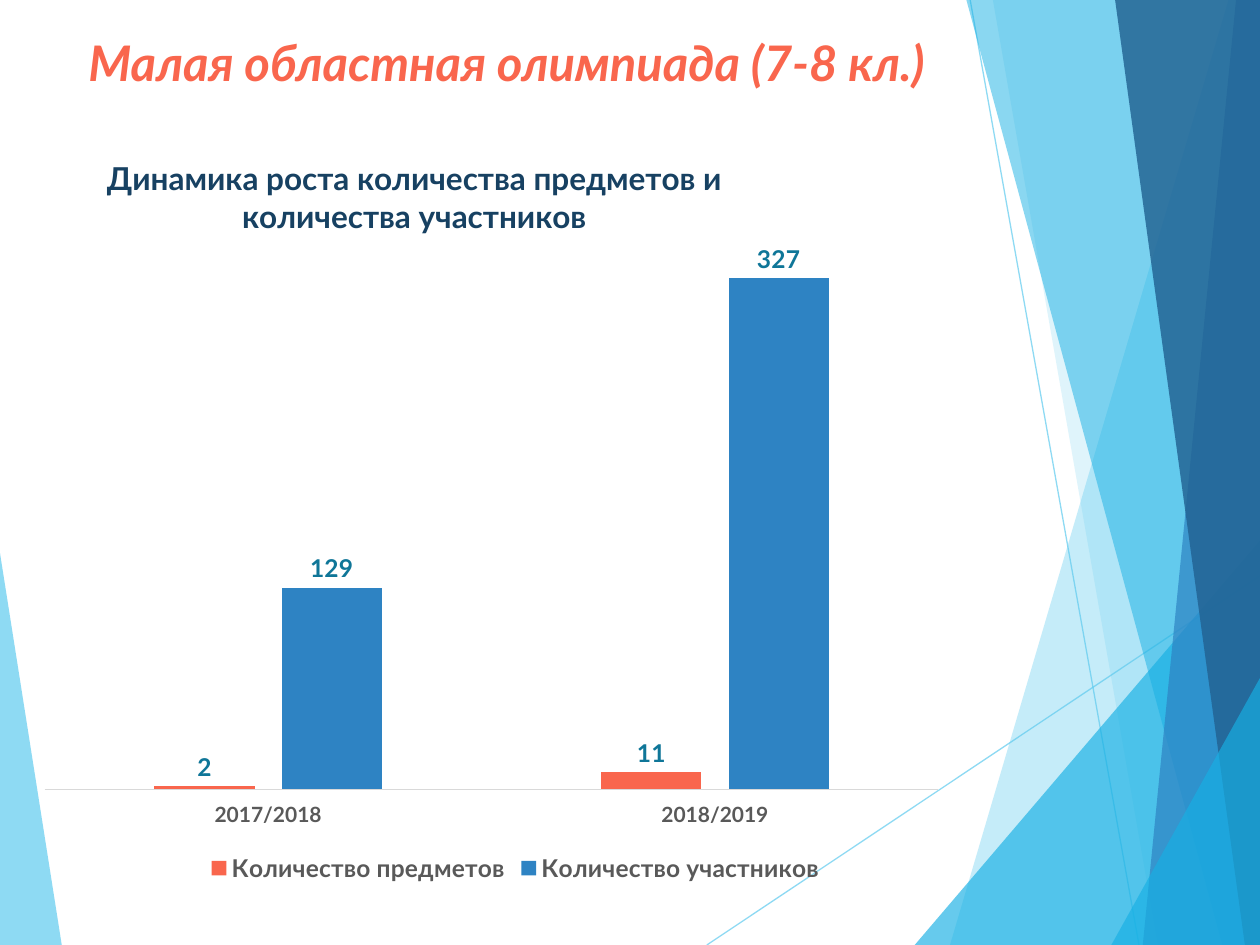
"""Build the slide on the growth of the small regional olympiad."""
from lxml.etree import SubElement
from pptx import Presentation
from pptx.chart.data import CategoryChartData
from pptx.dml.color import RGBColor
from pptx.enum.chart import XL_CHART_TYPE, XL_LABEL_POSITION, XL_LEGEND_POSITION, XL_TICK_LABEL_POSITION, XL_TICK_MARK
from pptx.enum.shapes import MSO_CONNECTOR
from pptx.enum.text import MSO_ANCHOR, MSO_AUTO_SIZE, PP_ALIGN
from pptx.oxml import parse_xml
from pptx.oxml.ns import nsdecls, qn
from pptx.util import Inches, Pt

COLORS = {
    "sky": "5FCBEF", "cyan": "17B0E4", "blue": "2E83C3", "navy": "226292",
    "coral": "F9664D", "ink": "174162", "teal": "0F7698", "gray": "595959", "rule": "D9D9D9",
}


def style(font, size, color, bold=True, italic=False):
    font.name = "Lato"
    font.size = Pt(size)
    font.bold = bold
    font.italic = italic
    font.color.rgb = RGBColor.from_string(COLORS[color])


def write(frame, text, **fmt):
    para = frame.paragraphs[0]
    para.alignment = PP_ALIGN.CENTER
    run = para.add_run()
    run.text = text
    style(run.font, **fmt)
    return run


deck = Presentation()
deck.slide_width, deck.slide_height = Inches(10), Inches(7.5)
slide = deck.slides.add_slide(deck.slide_layouts[6])
shapes = slide.shapes

rays = [((5.61, 7.5), (10, 4.57)), ((7.7, 0), (9.04, 7.5))]
shards = [
    ("sky", 70, [(0, 4.39), (0.49, 7.5), (0, 7.5)]),
    ("sky", 36, [(9.75, 0), (7.54, 7.5), (10, 7.5), (10, 0)]),
    ("sky", 20, [(7.88, 0), (9.19, 7.5), (10, 7.5), (10, 0)]),
    ("cyan", 66, [(7.26, 7.5), (10, 4.29), (10, 7.5)]),
    ("cyan", 50, [(7.67, 0), (9.7, 7.5), (10, 7.5), (10, 0)]),
    ("blue", 70, [(9.81, 0), (9.07, 7.5), (10, 7.5), (10, 0)]),
    ("navy", 82, [(8.85, 0), (9.88, 7.5), (10, 7.5), (10, 0)]),
    ("cyan", 66, [(8.82, 7.5), (10, 5.38), (10, 7.5)]),
]
for start, end in rays:
    ray = shapes.add_connector(MSO_CONNECTOR.STRAIGHT, *map(Inches, start + end))
    ray.line.width = Pt(0.75)
    ray.line.color.rgb = RGBColor.from_string(COLORS["sky"])
    tint = next(ray.line._ln.iter(qn("a:srgbClr")))
    SubElement(tint, qn("a:alpha"), val="70000")
    SubElement(ray._element.spPr, qn("a:effectLst"))

for color, alpha, points in shards:
    spots = [(Inches(x), Inches(y)) for x, y in points]
    pen = shapes.build_freeform(*spots[0])
    pen.add_line_segments(spots[1:], close=True)
    shard = pen.convert_to_shape()
    shard.shadow.inherit = False
    shard.line.fill.background()
    shard.fill.solid()
    shard.fill.fore_color.rgb = RGBColor.from_string(COLORS[color])
    tint = next(shard._element.spPr.iter(qn("a:srgbClr")))
    SubElement(tint, qn("a:alpha"), val=str(alpha * 1000))

data = CategoryChartData()
data.categories = ["2017/2018", "2018/2019"]
data.add_series("Количество предметов", [2, 11])
data.add_series("Количество участников", [129, 327])
chart = shapes.add_chart(
    XL_CHART_TYPE.COLUMN_CLUSTERED, Inches(0.35), Inches(1.07), Inches(7.48), Inches(5.98), data
).chart
style(chart.font, 10, "gray", bold=False)
write(chart.chart_title.text_frame, "Динамика роста количества предметов и количества участников",
      size=18, color="ink")
chart.chart_title.include_in_layout = False

axis = chart.category_axis
axis.major_tick_mark = XL_TICK_MARK.NONE
axis.tick_label_position = XL_TICK_LABEL_POSITION.LOW
axis.format.line.width = Pt(0.75)
axis.format.line.color.rgb = RGBColor.from_string(COLORS["rule"])
style(axis.tick_labels.font, 12, "gray")
scale = chart.value_axis
scale.visible = False
scale.has_major_gridlines = False
scale.minimum_scale, scale.maximum_scale = 0, 350

chart.has_legend = True
chart.legend.position = XL_LEGEND_POSITION.BOTTOM
chart.legend.include_in_layout = False
style(chart.legend.font, 14, "gray")

plot = chart.plots[0]
plot.gap_width, plot.overlap = 219, -27
plot.vary_by_categories = False
for bars, color in zip(plot.series, ["coral", "blue"]):
    bars.format.fill.solid()
    bars.format.fill.fore_color.rgb = RGBColor.from_string(COLORS[color])
    labels = bars.data_labels
    labels.show_value = True
    labels.position = XL_LABEL_POSITION.OUTSIDE_END
    style(labels.font, 14, "teal")

places = [
    (chart._chartSpace.chart.plotArea, 0, {"x": 0, "y": 0.143, "w": 0.949, "h": 0.726}),
    (chart.chart_title._element, 1, {"x": 0.06, "y": 0.02}),
]
for part, spot, box in places:
    for old in part.findall(qn("c:layout")):
        part.remove(old)
    target = '<c:layoutTarget val="inner"/>' if "w" in box else ""
    modes = "".join(f'<c:{key}Mode val="edge"/>' for key in "xy")
    sizes = "".join(f'<c:{key} val="{val}"/>' for key, val in box.items())
    part.insert(spot, parse_xml(
        f'<c:layout {nsdecls("c")}><c:manualLayout>{target}{modes}{sizes}</c:manualLayout></c:layout>'))

title = shapes.add_textbox(Inches(0.2), Inches(0.21), Inches(7.64), Inches(0.57))
frame = title.text_frame
frame.word_wrap = True
frame.auto_size = MSO_AUTO_SIZE.SHAPE_TO_FIT_TEXT
frame.vertical_anchor = MSO_ANCHOR.TOP
run = write(frame, "Малая областная олимпиада (7-8 кл.)", size=28, color="coral", italic=True)
run.font._element.insert(0, parse_xml(
    f'<a:ln {nsdecls("a")} w="{Pt(1.75)}"><a:solidFill><a:srgbClr val="{COLORS["coral"]}"/></a:solidFill></a:ln>'))

deck.save("out.pptx")
